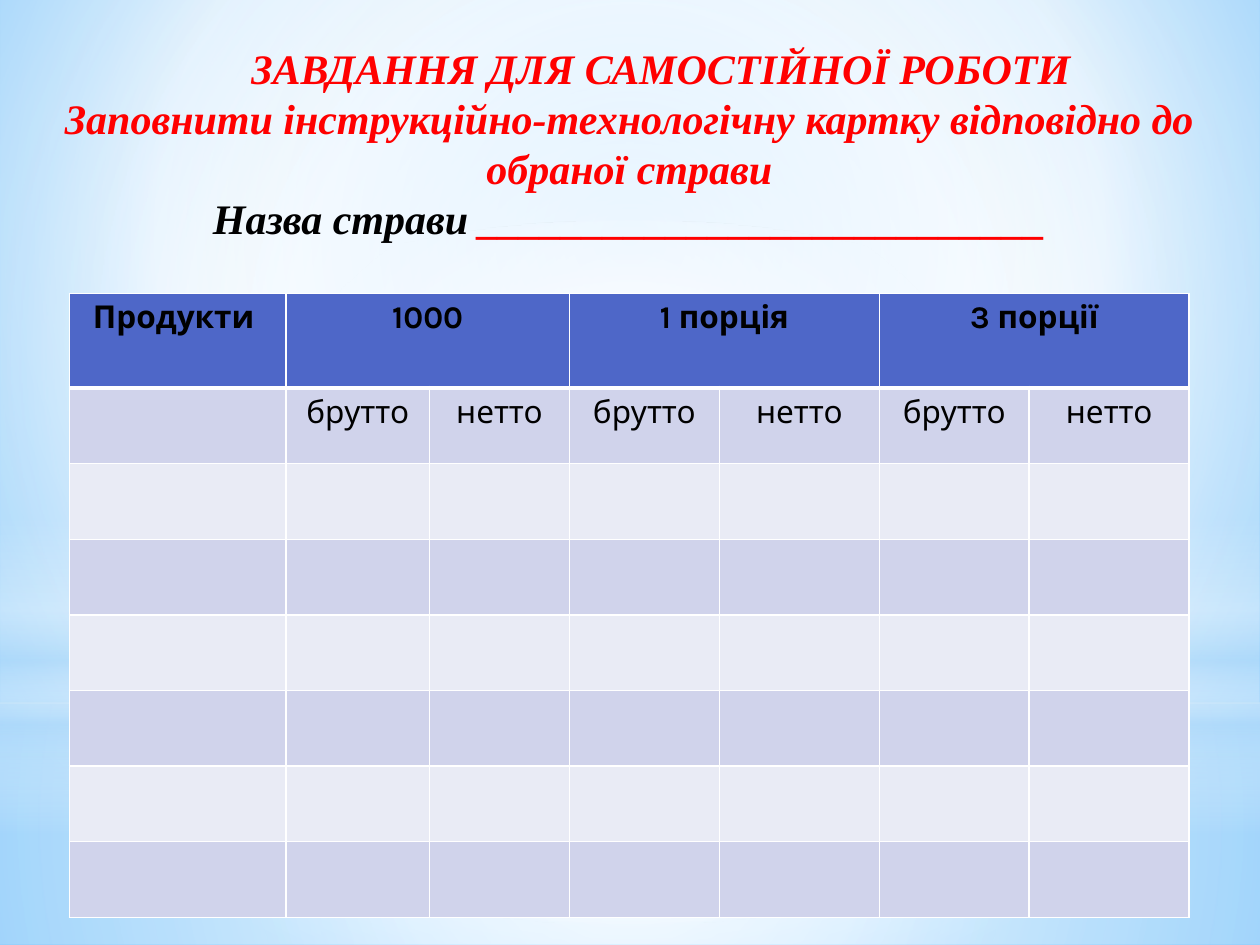
from dataclasses import dataclass

from lxml.etree import SubElement
from pptx import Presentation
from pptx.dml.color import RGBColor
from pptx.enum.shapes import MSO_SHAPE
from pptx.enum.text import MSO_ANCHOR, MSO_AUTO_SIZE, PP_ALIGN
from pptx.oxml.ns import qn
from pptx.util import Inches, Pt


@dataclass(frozen=True)
class Theme:
    """Colours, fonts and type sizes of the slide."""
    red: str = "FF0000"
    black: str = "000000"
    white: str = "FFFFFF"
    head: str = "4E67C8"
    bands: tuple = ("D0D3EB", "E9EBF5")
    sky: str = "B4DCFA"
    edge: str = "5BB9FF"
    core: str = "9ED5FF"
    serif: str = "Times New Roman"
    sans: str = "Karla"
    large: float = 24
    small: float = 18
    lead: float = 28.6
    thin: float = 1
    thick: float = 3


class Deck:
    """Draws each kind of element on the current slide."""

    def __init__(self, theme, show):
        self.theme = theme
        self.slide = show.slides.add_slide(show.slide_layouts[5])

    def blend(self, root, stops, rect=None):
        """Swap the solid fill under root for a gradient."""
        solid = root.find(".//" + qn("a:solidFill"))
        grad = solid.makeelement(qn("a:gradFill"), {"rotWithShape": "1"})
        solid.getparent().replace(solid, grad)
        rows = SubElement(grad, qn("a:gsLst"))
        for spot, tint, alpha in stops:
            stop = SubElement(rows, qn("a:gs"), pos=str(spot * 1000))
            color = SubElement(stop, qn("a:srgbClr"), val=tint)
            if alpha < 100:
                SubElement(color, qn("a:alpha"), val=str(alpha * 1000))
        if rect:
            ring = SubElement(grad, qn("a:path"), {"path": "circle"})
            sides = {side: str(part * 1000) for side, part in zip("ltrb", rect)}
            SubElement(ring, qn("a:fillToRect"), sides)
        else:
            SubElement(grad, qn("a:lin"), ang="5400000", scaled="0")

    def back(self, stops, rect):
        """Paint the slide background."""
        self.slide.background.fill.solid()
        self.slide.background.fill.fore_color.rgb = RGBColor.from_string(self.theme.white)
        self.blend(self.slide.element.find(".//" + qn("p:bg")), stops, rect)

    def glow(self, kind, top, height, stops, rect=None):
        """Add a full-width soft panel."""
        shape = self.slide.shapes.add_shape(
            kind, 0, Inches(top), Inches(10), Inches(height))
        shape.shadow.inherit = False
        shape.line.fill.background()
        shape.fill.solid()
        shape.fill.fore_color.rgb = RGBColor.from_string(self.theme.white)
        self.blend(shape.element, stops, rect)

    def font(self, run, name, size, tint, bold=False, slant=False):
        """Format one run."""
        run.font.name, run.font.size = name, Pt(size)
        run.font.bold, run.font.italic = bold, slant
        run.font.color.rgb = RGBColor.from_string(tint)

    def title(self, box, lines):
        """Fill and place the title, in front of the panels."""
        title = self.slide.shapes.title
        self.slide.shapes.element.append(title.element)
        title.left, title.top, title.width, title.height = map(Inches, box)
        frame = title.text_frame
        frame.word_wrap = True
        frame.auto_size = MSO_AUTO_SIZE.NONE
        frame.vertical_anchor = MSO_ANCHOR.TOP
        frame.text = "\n".join(line[0][0] for line in lines)
        for para, line in zip(frame.paragraphs, lines):
            para.alignment = PP_ALIGN.CENTER
            para.line_spacing = Pt(self.theme.lead)
            for text, _ in line[1:]:
                para.add_run().text = text
            for run, (_, tint) in zip(para.runs, line):
                self.font(run, self.theme.serif, self.theme.large, tint, True, True)
        first = frame.paragraphs[0].runs[0]
        first.text = "\t" + first.text

    def border(self, cell, row):
        """Draw the four white edges of a cell."""
        theme = self.theme
        edges = {"L": theme.thin, "R": theme.thin,
                 "T": theme.thick if row == 1 else theme.thin,
                 "B": theme.thick if row == 0 else theme.thin}
        props = cell._tc.get_or_add_tcPr()
        for spot, (side, width) in enumerate(edges.items()):
            line = props.makeelement(qn("a:ln" + side), {"w": str(Pt(width))})
            fill = SubElement(line, qn("a:solidFill"))
            SubElement(fill, qn("a:srgbClr"), val=theme.white)
            props.insert(spot, line)

    def table(self, left, top, widths, heights, data, spans):
        """Add the banded table with merged heads."""
        theme = self.theme
        table = self.slide.shapes.add_table(
            len(heights), len(widths), Inches(left), Inches(top),
            Inches(sum(widths)), Inches(sum(heights))).table
        table.first_row = table.horz_banding = False
        for col, width in zip(table.columns, widths):
            col.width = Inches(width)
        for row, height in enumerate(heights):
            table.rows[row].height = Inches(height)
            for col in range(len(widths)):
                cell = table.cell(row, col)
                tint = theme.bands[(row - 1) % 2] if row else theme.head
                cell.fill.solid()
                cell.fill.fore_color.rgb = RGBColor.from_string(tint)
                self.border(cell, row)
                text = data[row][col] if row < len(data) else ""
                if text:
                    cell.text_frame.text = text
                    para = cell.text_frame.paragraphs[0]
                    para.alignment = PP_ALIGN.CENTER
                    self.font(para.runs[0], theme.sans, theme.small,
                              theme.black, row == 0)
        for col in spans:
            table.cell(0, col).merge(table.cell(0, col + 1))


def main():
    """Build and save the slide."""
    theme = Theme()
    show = Presentation()
    show.slide_width, show.slide_height = Inches(10), Inches(7.5)
    deck = Deck(theme, show)
    white, sky = theme.white, theme.sky
    mid = (50,) * 4
    deck.back([(0, theme.core, 100), (60, white, 100), (100, theme.edge, 100)],
              (20, 10, 20, 60))
    deck.glow(MSO_SHAPE.RECTANGLE, 5.58, 1.92,
              [(0, white, 91), (37, white, 76), (100, sky, 79)], mid)
    deck.glow(MSO_SHAPE.RECTANGLE, 0, 5.58,
              [(0, white, 89), (48, white, 62), (100, sky, 79)], mid)
    deck.glow(MSO_SHAPE.RECTANGLE, 4.12, 2.5,
              [(0, white, 0), (29, white, 30), (45, sky, 40),
               (55, white, 26), (65, sky, 60), (100, white, 0)])
    deck.glow(MSO_SHAPE.OVAL, 1.75, 5.58, [(0, white, 100), (56, white, 0)], mid)
    deck.title((0.19, 0.29, 9.61, 2.52), [
        [("ЗАВДАННЯ ДЛЯ САМОСТІЙНОЇ РОБОТИ", theme.red)],
        [("Заповнити інструкційно-технологічну картку відповідно до обраної страви",
          theme.red)],
        [("Назва страви", theme.black), (" " + "_" * 27, theme.red)],
    ])
    deck.table(0.55, 2.33, [1.72, 1.14, 1.11] + [1.19, 1.27] * 2,
               [0.75] + [0.6] * 7,
               [["Продукти ", "1000", "", "1 порція", "", "3 порції", ""],
                [""] + ["брутто", "нетто"] * 3], (1, 3, 5))
    show.save("out.pptx")


if __name__ == "__main__":
    main()
